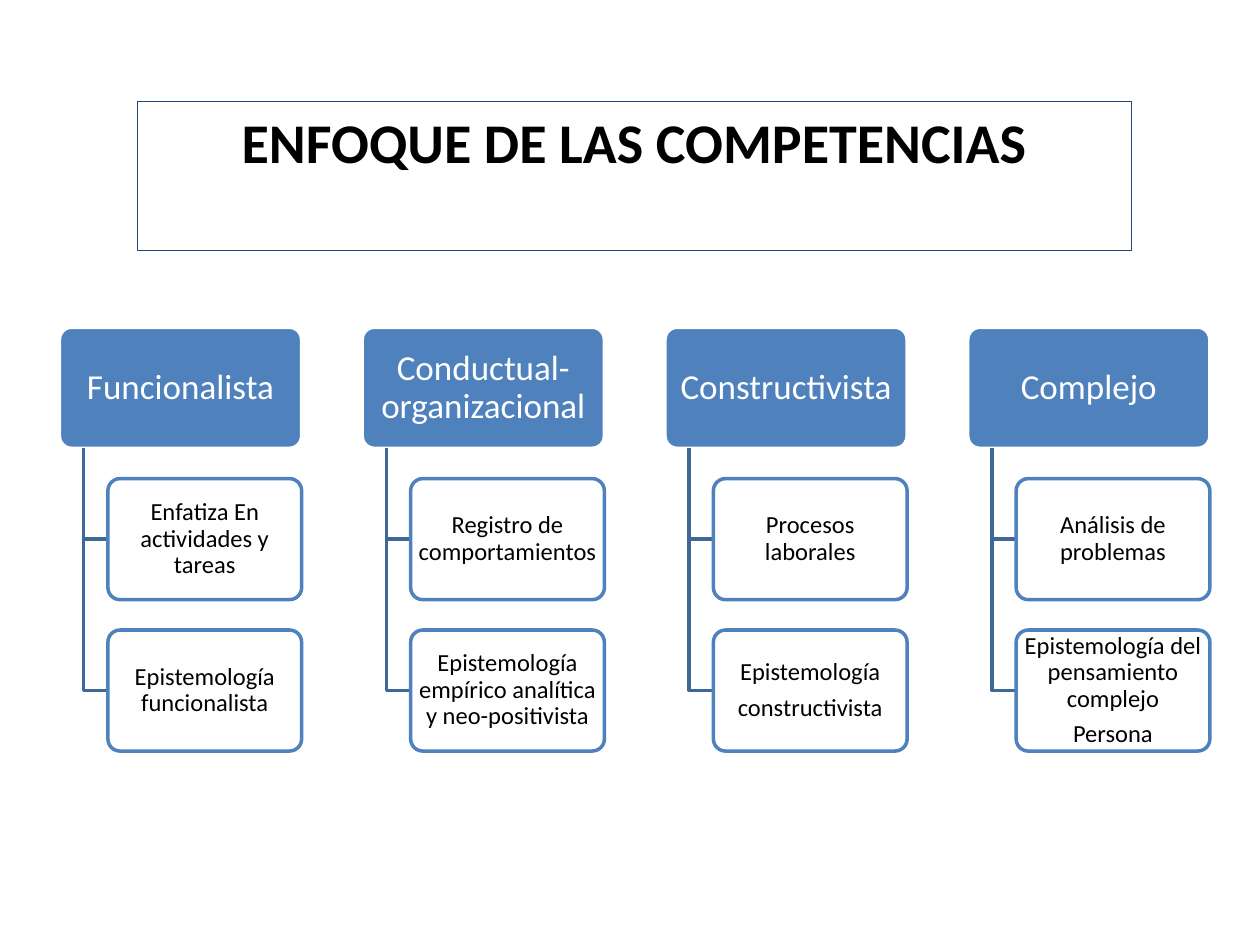
from lxml.etree import SubElement
from pptx import Presentation
from pptx.dml.color import RGBColor
from pptx.enum.shapes import MSO_SHAPE
from pptx.enum.text import MSO_ANCHOR, MSO_AUTO_SIZE, PP_ALIGN
from pptx.oxml.ns import qn
from pptx.util import Pt

FONT = "Calibri"
BLUE, TRUNK_BLUE, TITLE_LINE = "4F81BD", "3F6797", "1F497D"
WHITE, BLACK = "FFFFFF", "000000"

TITLE = "ENFOQUE DE LAS COMPETENCIAS"
APPROACHES = [
    ("Funcionalista",
     ["Enfatiza En actividades y tareas", "Epistemología funcionalista"]),
    ("Conductual-organizacional",
     ["Registro de comportamientos",
      "Epistemología empírico analítica y neo-positivista"]),
    ("Constructivista",
     ["Procesos laborales", "Epistemología\nconstructivista"]),
    ("Complejo",
     ["Análisis de problemas",
      "Epistemología del pensamiento complejo\nPersona"]),
]


def color(hex_code):
    return RGBColor.from_string(hex_code)


def paint(shape, fill, line, line_width):
    shape.fill.solid()
    shape.fill.fore_color.rgb = color(fill)
    shape.line.color.rgb = color(line)
    shape.line.width = Pt(line_width)


def format_text(frame, size, text_color, bold=False):
    for para in frame.paragraphs:
        para.alignment = PP_ALIGN.CENTER
        for span in para.runs:
            span.font.name = FONT
            span.font.size = Pt(size)
            span.font.bold = bold
            span.font.color.rgb = color(text_color)


def add_title(page, left, top, width, height):
    title = page.shapes.title
    title.left, title.top = Pt(left), Pt(top)
    title.width, title.height = Pt(width), Pt(height)
    paint(title, WHITE, TITLE_LINE, 0.75)
    frame = title.text_frame
    frame.text = TITLE
    frame.auto_size = MSO_AUTO_SIZE.NONE
    frame.vertical_anchor = MSO_ANCHOR.TOP
    format_text(frame, 32, BLACK, bold=True)


def add_card(page, left, top, width, height, text, size, text_color,
             fill, line, margin):
    """Add a rounded box with centred text."""
    card = page.shapes.add_shape(MSO_SHAPE.ROUNDED_RECTANGLE, Pt(left), Pt(top),
                                 Pt(width), Pt(height))
    card.adjustments[0] = 0.1
    card.shadow.inherit = False
    paint(card, fill, line, 2)
    frame = card.text_frame
    frame.word_wrap = True
    frame.vertical_anchor = MSO_ANCHOR.MIDDLE
    frame.margin_left = frame.margin_right = Pt(margin)
    frame.margin_top = frame.margin_bottom = Pt(margin * 0.7)
    frame.text = text
    format_text(frame, size, text_color)
    for para in frame.paragraphs:
        para.line_spacing = 0.9
        para.space_after = Pt(size * 0.35)
    return card


def set_opacity(shape, percent):
    fill_color = shape.fill._xPr.find(qn("a:solidFill"))[0]
    SubElement(fill_color, qn("a:alpha")).set("val", str(percent * 1000))


def add_branch(page, left, top, right, bottom):
    """Draw the elbow that goes down from a header and right to its card."""
    builder = page.shapes.build_freeform(Pt(left), Pt(top))
    builder.add_line_segments([(Pt(left), Pt(bottom)), (Pt(right), Pt(bottom))],
                              close=False)
    branch = builder.convert_to_shape()
    branch.shadow.inherit = False
    branch.fill.background()
    branch.line.color.rgb = color(TRUNK_BLUE)
    branch.line.width = Pt(2)


def add_approach(page, left, top, width, name, traits):
    """Add a header and, indented below it, one card for each trait."""
    height = width / 2
    card_left = left + width * 0.2
    add_card(page, left, top, width, height, name, 20, WHITE, BLUE, WHITE, 3)
    for row, trait in enumerate(traits, start=1):
        card_top = top + row * height * 1.25
        add_branch(page, left + width * 0.1, top + height,
                   card_left, card_top + height / 2)
        card = add_card(page, card_left, card_top, width * 0.8, height, trait,
                        14, BLACK, WHITE, BLUE, 2)
        set_opacity(card, 90)


def add_hierarchy(page, left, top, width):
    """Spread the approaches over the width, with gaps of a quarter column."""
    column = width / (1.25 * len(APPROACHES) - 0.25)
    for index, (name, traits) in enumerate(APPROACHES):
        add_approach(page, left + index * column * 1.25, top, column, name, traits)


def main():
    deck = Presentation()
    deck.slide_width, deck.slide_height = Pt(720), Pt(540)
    page = deck.slides.add_slide(deck.slide_layouts[5])
    add_title(page, 78.5, 58, 568, 85)
    add_hierarchy(page, 34, 187, 657.4)
    deck.save("out.pptx")


if __name__ == "__main__":
    main()
